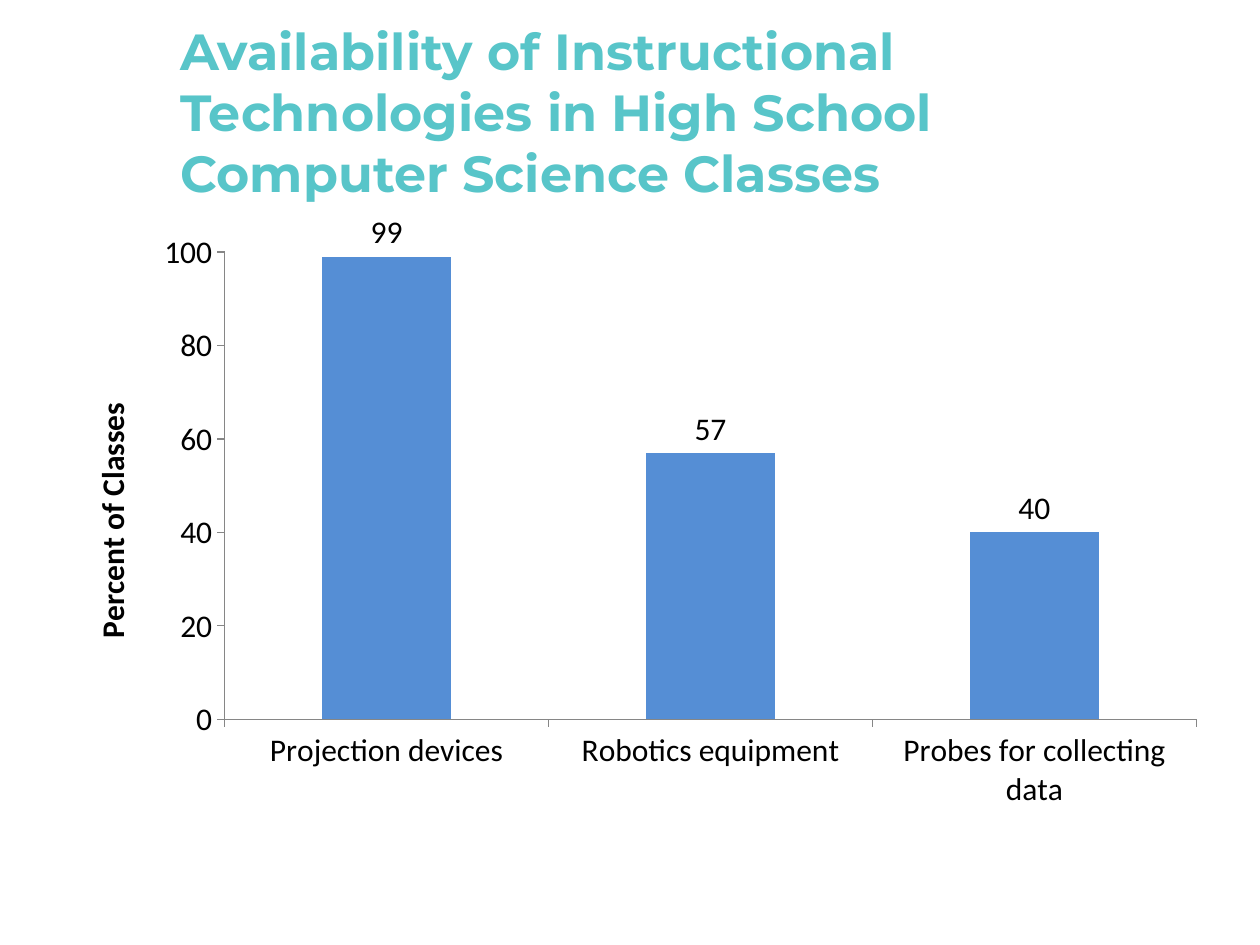
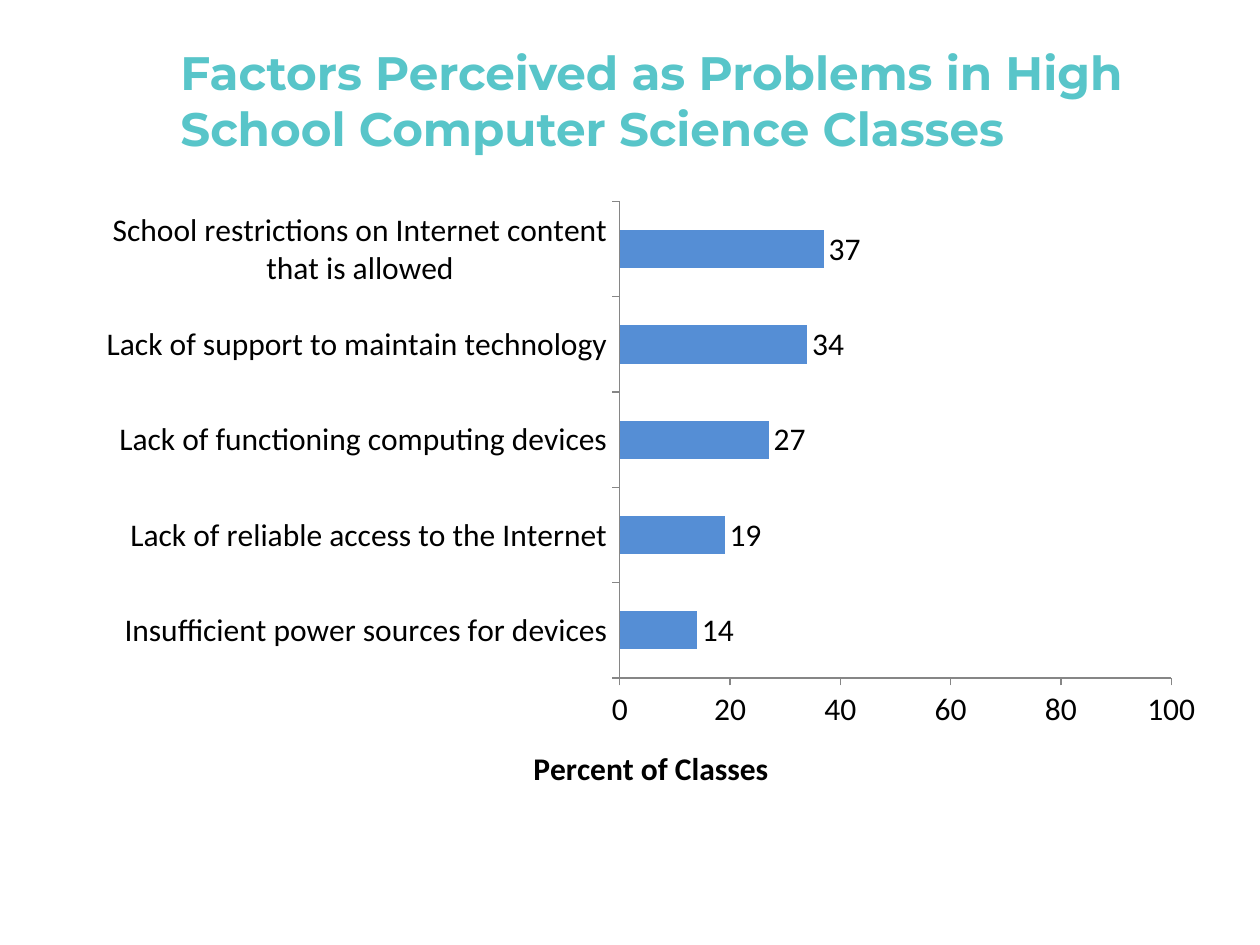
from dataclasses import dataclass

from lxml import etree
from pptx import Presentation
from pptx.chart.data import CategoryChartData
from pptx.dml.color import RGBColor
from pptx.enum.chart import XL_CHART_TYPE as ChartType
from pptx.enum.chart import XL_LABEL_POSITION as LabelPosition
from pptx.enum.chart import XL_TICK_MARK as TickMark
from pptx.enum.text import MSO_ANCHOR as Anchor
from pptx.oxml.ns import qn
from pptx.util import Pt


@dataclass(frozen=True)
class Theme:
    title_color: RGBColor = RGBColor.from_string("58C5C9")
    bar_color: RGBColor = RGBColor.from_string("558ED5")
    axis_color: RGBColor = RGBColor.from_string("868686")
    text_color: RGBColor = RGBColor.from_string("000000")
    title_font: str = "Montserrat"
    chart_font: str = "Calibri"
    chart_size: int = 18


theme = Theme()
EMU_PER_INCH = 914400
PX_PER_INCH = 126


def px(*lengths):
    """Turn whole pixels into EMU."""
    return [round(length * EMU_PER_INCH / PX_PER_INCH) for length in lengths]


def place_plot(chart, left, top, width, height):
    """Fix the inner plot area, as fractions of the chart frame."""
    plot_area = chart.plots[0]._element.getparent()
    for layout in plot_area.findall(qn("c:layout")):
        plot_area.remove(layout)
    layout = etree.Element(qn("c:layout"))
    plot_area.insert(0, layout)
    manual = etree.SubElement(layout, qn("c:manualLayout"))
    settings = dict(layoutTarget="inner", xMode="edge", yMode="edge",
                    x=left, y=top, w=width, h=height)
    for name, value in settings.items():
        etree.SubElement(manual, qn(f"c:{name}")).set("val", str(value))


chart_slides = [
    dict(
        title="Availability of Instructional Technologies in High School "
              "Computer Science Classes",
        title_top=32,
        title_size=29,
        chart_type=ChartType.COLUMN_CLUSTERED,
        plot=(0.124, 0.1, 0.857, 0.742),
        percents={
            "Projection devices": 99,
            "Robotics equipment": 57,
            "Probes for collecting data": 40,
        },
    ),
    dict(
        title="Factors Perceived as Problems in High School Computer Science Classes",
        title_top=21,
        title_size=26.8,
        chart_type=ChartType.BAR_CLUSTERED,
        plot=None,
        percents={
            "Insufficient power sources for devices": 14,
            "Lack of reliable access to the Internet": 19,
            "Lack of functioning computing devices": 27,
            "Lack of support to maintain technology": 34,
            "School restrictions on Internet content that is allowed": 37,
        },
    ),
]

presentation = Presentation()
presentation.slide_width, presentation.slide_height = px(1260, 945)

for content in chart_slides:
    slide = presentation.slides.add_slide(presentation.slide_layouts[6])

    # Title
    title_frame = slide.shapes.add_textbox(
        *px(168, content["title_top"], 1029, 158)).text_frame
    title_frame.word_wrap = True
    title_frame.vertical_anchor = Anchor.MIDDLE
    run = title_frame.paragraphs[0].add_run()
    run.text = content["title"]
    run.font.name = theme.title_font
    run.font.size = Pt(content["title_size"])
    run.font.bold = True
    run.font.color.rgb = theme.title_color

    # Chart
    chart_data = CategoryChartData()
    chart_data.categories = content["percents"].keys()
    chart_data.add_series("Series 1", content["percents"].values())
    chart = slide.shapes.add_chart(
        content["chart_type"], *px(84, 189, 1134, 630), chart_data).chart
    chart.has_title = False
    chart.has_legend = False
    chart.font.name = theme.chart_font
    chart.font.size = Pt(theme.chart_size)
    chart.font.color.rgb = theme.text_color
    if content["plot"]:
        place_plot(chart, *content["plot"])

    # Bars and their values
    plot = chart.plots[0]
    plot.gap_width = 150
    plot.vary_by_categories = False
    series = plot.series[0]
    series.invert_if_negative = False
    series.format.fill.solid()
    series.format.fill.fore_color.rgb = theme.bar_color
    series.data_labels.show_value = True
    series.data_labels.position = LabelPosition.OUTSIDE_END

    # Axes
    for axis in (chart.category_axis, chart.value_axis):
        axis.has_major_gridlines = False
        axis.major_tick_mark = TickMark.OUTSIDE
        axis.minor_tick_mark = TickMark.NONE
        axis.format.line.color.rgb = theme.axis_color
        axis.format.line.width = Pt(0.75)
    chart.value_axis.minimum_scale = 0
    chart.value_axis.maximum_scale = 100
    chart.value_axis.major_unit = 20
    axis_run = chart.value_axis.axis_title.text_frame.paragraphs[0].add_run()
    axis_run.text = "Percent of Classes"
    axis_run.font.name = theme.chart_font
    axis_run.font.size = Pt(theme.chart_size)
    axis_run.font.bold = True
    axis_run.font.color.rgb = theme.text_color

presentation.save("out.pptx")
